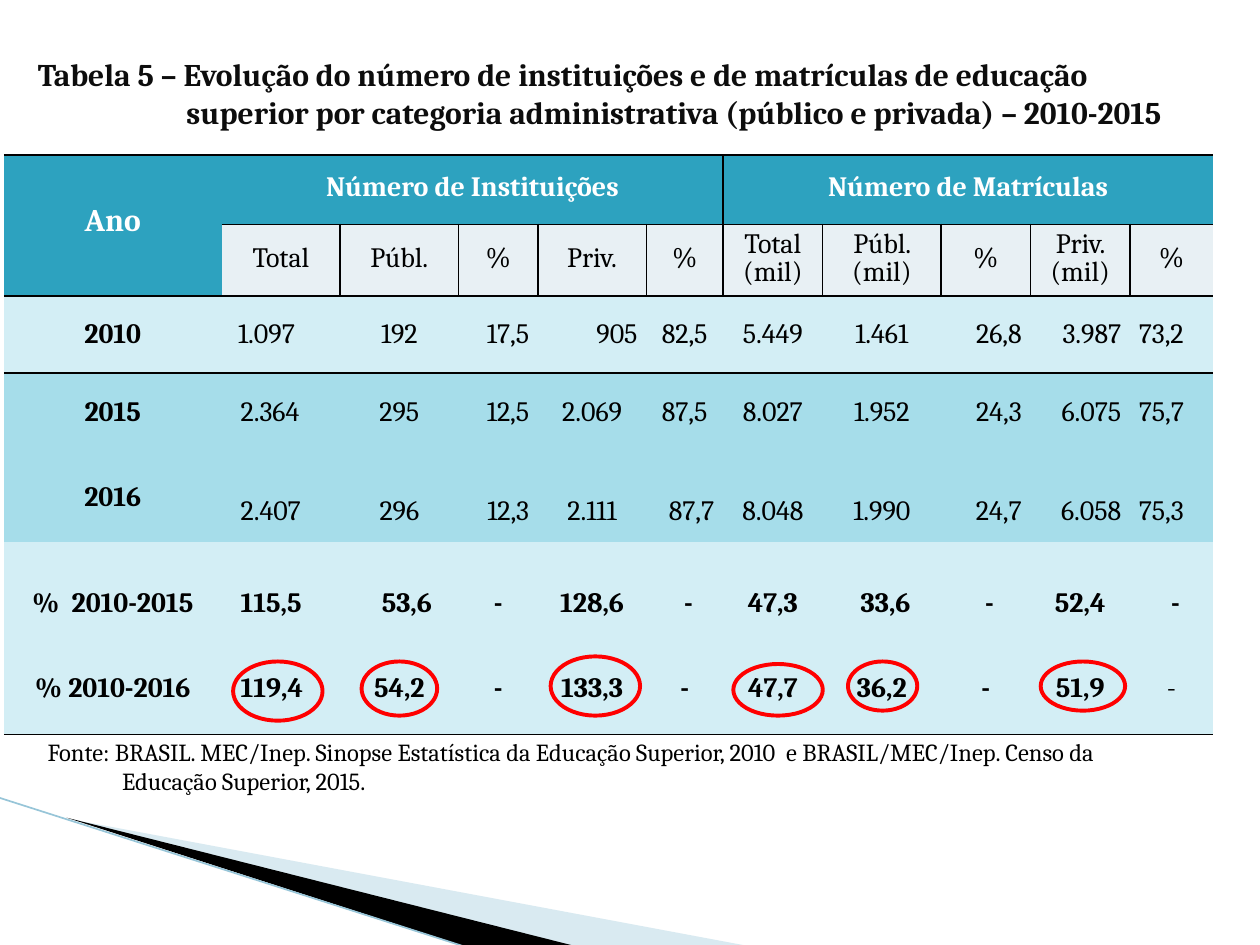
from lxml.etree import SubElement
from pptx import Presentation
from pptx.dml.color import RGBColor
from pptx.enum.shapes import MSO_CONNECTOR, MSO_SHAPE
from pptx.enum.text import MSO_ANCHOR, PP_ALIGN
from pptx.oxml.ns import qn
from pptx.util import Inches, Pt

COLORS = {
    "heading": "2DA2BF", "subheading": "E8F0F4", "light_row": "D3EEF5",
    "dark_row": "A6DDEA", "black": "000000", "white": "FFFFFF",
    "title": "0D0D0D", "highlight": "FF0000", "pale_wedge": "A0CBDC",
    "wedge_edge": "97C5D8",
}
ALIGNMENTS = {"c": PP_ALIGN.CENTER, "l": PP_ALIGN.LEFT, "r": PP_ALIGN.RIGHT}
NO_TABLE_STYLE = "{2D5ABB26-0587-4C30-8999-92F81FD0307C}"
COLUMN_WIDTHS = [1.73, 0.94, 0.94, 0.63, 0.86, 0.61, 0.79, 0.94, 0.71, 0.79, 0.66]
ROW_HEIGHTS = [0.55, 0.57, 0.61, 0.63, 0.71, 1.02, 0.51]
TITLE = ("Tabela 5 – Evolução do número de instituições e de matrículas de educação "
         "superior por categoria administrativa (público e privada) – 2010-2015")
SOURCE = ("Fonte: BRASIL. MEC/Inep. Sinopse Estatística da Educação Superior, 2010  e "
          "BRASIL/MEC/Inep. Censo da Educação Superior, 2015.")
ROWS = [
    ["Ano", "Número de Instituições", "", "", "", "", "Número de Matrículas", "", "", "", ""],
    ["", "Total", "Públ.", "%", "Priv.", "%", "Total (mil)", "Públ. (mil)", "%",
     "Priv. (mil)", "%"],
    ["2010", "1.097", "192", "17,5", "905", "82,5", "5.449", "1.461", "26,8", "3.987", "73,2"],
    ["2015", "2.364", "295", "12,5", "2.069", "87,5", "8.027", "1.952", "24,3", "6.075", "75,7"],
    ["2016", "2.407", "296", "12,3", "2.111", "87,7", "8.048", "1.990", "24,7", "6.058", "75,3"],
    ["%  2010-2015", "115,5", "53,6", "-", "128,6", "-", "47,3", "33,6", "-", "52,4", "-"],
    ["% 2010-2016", "119,4", "54,2", "-", "133,3", "-", "47,7", "36,2", "-", "51,9", "-"],
]
ROW_ALIGNMENTS = ["c" * 11, "c" * 11, "clcrrcccrrl", "clcrccccrrl", "clcrcrccrrl",
                  "cl" + "c" * 9, "cl" + "c" * 9]
ROW_FILLS = ["heading", "subheading", "light_row", "dark_row", "dark_row",
             "light_row", "light_row"]
EXACT = {"line_spacing": Pt(16), "space_after": Pt(2)}
LOOSE = {"space_after": Pt(3)}
ROW_SPACING = [EXACT, EXACT, LOOSE, LOOSE, LOOSE, EXACT,
               {"line_spacing": 1.07, "space_after": Pt(2)}]
LEFT_INDENTS = {(2, 1): 0.06, (3, 1): 0.08, (4, 1): 0.08, (5, 1): 0.08, (6, 1): 0.08,
                (5, 2): 0.12, (5, 5): 0.06, (5, 7): 0.06, (5, 8): 0.06, (5, 10): 0.06}
HIGHLIGHTS = [(1.85, 5.25, 0.71, 0.47), (2.87, 5.25, 0.6, 0.43), (4.37, 5.21, 0.71, 0.47),
              (5.82, 5.27, 0.71, 0.41), (6.73, 5.25, 0.55, 0.39), (8.26, 5.25, 0.67, 0.39)]


def rgb(name):
    return RGBColor.from_string(COLORS[name])


def apply_format(target, values):
    for attribute, value in values.items():
        setattr(target, attribute, value)


def format_font(font, size, color, bold=False):
    apply_format(font, {"name": "Cambria", "size": Pt(size), "bold": bold})
    font.color.rgb = rgb(color)


def write_hanging(frame, text, hang, size, color, bold=False):
    frame.word_wrap = True
    paragraph = frame.paragraphs[0]
    paragraph.text = text
    paragraph.alignment = PP_ALIGN.LEFT
    properties = paragraph._p.get_or_add_pPr()
    properties.set("marL", str(Inches(hang)))
    properties.set("indent", str(-Inches(hang)))
    format_font(paragraph.runs[0].font, size, color, bold)


def place(shape, left, top, width, height):
    apply_format(shape, {"left": Inches(left), "top": Inches(top),
                         "width": Inches(width), "height": Inches(height)})


def add_wedge(slide, points, color, opacity=100):
    start, *others = [(Inches(x), Inches(y)) for x, y in points]
    builder = slide.shapes.build_freeform(*start)
    builder.add_line_segments(others)
    wedge = builder.convert_to_shape()
    wedge.shadow.inherit = False
    wedge.fill.solid()
    wedge.fill.fore_color.rgb = rgb(color)
    wedge.line.fill.background()
    if opacity < 100:
        tone = wedge.fill._xPr.find(qn("a:solidFill"))[0]
        SubElement(tone, qn("a:alpha")).set("val", str(opacity * 1000))


def add_edge(slide, start, end):
    edge = slide.shapes.add_connector(MSO_CONNECTOR.STRAIGHT,
                                      *[Inches(value) for value in start + end])
    edge.line.color.rgb = rgb("wedge_edge")
    edge.line.width = Pt(0.95)
    SubElement(edge._element.spPr, qn("a:effectLst"))


def cell_borders(row, column):
    if row == 0:
        return "LTB" if column == 6 else "TB"
    if row == 1:
        left = "L" if column > 1 else ""
        right = "R" if 0 < column < 10 else ""
        return left + right + ("TB" if column else "B")
    return {2: "T", 6: "B"}.get(row, "")


def draw_borders(cell, sides):
    properties = cell._tc.get_or_add_tcPr()
    for side in sides:
        border = SubElement(properties, qn(f"a:ln{side}"), w=str(Pt(1)))
        fill = SubElement(border, qn("a:solidFill"))
        SubElement(fill, qn("a:srgbClr"), val=COLORS["black"])


def fill_cell(cell, row, column):
    draw_borders(cell, cell_borders(row, column))
    cell.fill.solid()
    cell.fill.fore_color.rgb = rgb("heading" if column == 0 and row < 2 else ROW_FILLS[row])
    lowered = row == 4 and column > 0
    top_anchored = lowered or row == 6
    apply_format(cell, {
        "margin_left": Inches(0.07 + LEFT_INDENTS.get((row, column), 0)),
        "margin_right": Inches(0.07),
        "margin_top": Inches(0.34 if lowered else 0),
        "margin_bottom": 0,
        "vertical_anchor": MSO_ANCHOR.TOP if top_anchored else MSO_ANCHOR.MIDDLE,
    })
    paragraph = cell.text_frame.paragraphs[0]
    paragraph.text = ROWS[row][column]
    apply_format(paragraph, ROW_SPACING[row])
    paragraph.alignment = ALIGNMENTS[ROW_ALIGNMENTS[row][column]]
    bold = row in (0, 5) or (row == 6 and column < 10) or (row > 1 and column == 0)
    format_font(paragraph.font, 18 if row == column == 0 else 16,
                "white" if row == 0 else "black", bold)


def add_enrolment_table(slide):
    frame = slide.shapes.add_table(len(ROWS), len(COLUMN_WIDTHS), Inches(0.03), Inches(1.23),
                                   Inches(sum(COLUMN_WIDTHS)), Inches(sum(ROW_HEIGHTS)))
    table = frame.table
    table._tbl.tblPr.find(qn("a:tableStyleId")).text = NO_TABLE_STYLE
    apply_format(table, {"first_row": False, "horz_banding": False})
    for column, width in zip(table.columns, COLUMN_WIDTHS):
        column.width = Inches(width)
    for row, height in zip(table.rows, ROW_HEIGHTS):
        row.height = Inches(height)
    for row in range(len(ROWS)):
        for column in range(len(COLUMN_WIDTHS)):
            fill_cell(table.cell(row, column), row, column)
    for first, last in (((0, 0), (1, 0)), ((0, 1), (0, 5)), ((0, 6), (0, 10))):
        table.cell(*first).merge(table.cell(*last))


def add_title(slide):
    title = slide.shapes.title
    place(title, 0.2, 0, 9.53, 1.47)
    title.text_frame.vertical_anchor = MSO_ANCHOR.MIDDLE
    write_hanging(title.text_frame, TITLE, 1.18, 18, "title", True)


def add_source(slide):
    box = slide.shapes.add_textbox(Inches(0.28), Inches(5.8), Inches(9.29), Inches(0.88))
    write_hanging(box.text_frame, SOURCE, 0.59, 14, "black")


def add_highlight(slide, bounds):
    ring = slide.shapes.add_shape(MSO_SHAPE.OVAL, *[Inches(value) for value in bounds])
    ring.shadow.inherit = False
    ring.fill.background()
    ring.line.color.rgb = rgb("highlight")
    ring.line.width = Pt(2.25)


def main():
    presentation = Presentation()
    apply_format(presentation, {"slide_width": Inches(10), "slide_height": Inches(7.5)})
    slide = presentation.slides.add_slide(presentation.slide_layouts[5])
    add_wedge(slide, [(0.55, 6.5), (5.95, 7.51), (4.56, 7.51)], "pale_wedge", 40)
    add_wedge(slide, [(0.53, 6.49), (4.57, 7.51), (3.72, 7.52)], "black")
    add_edge(slide, (-0.01, 6.33), (3.71, 7.52))
    add_enrolment_table(slide)
    add_title(slide)
    add_source(slide)
    for bounds in HIGHLIGHTS:
        add_highlight(slide, bounds)
    presentation.save("out.pptx")


if __name__ == "__main__":
    main()
